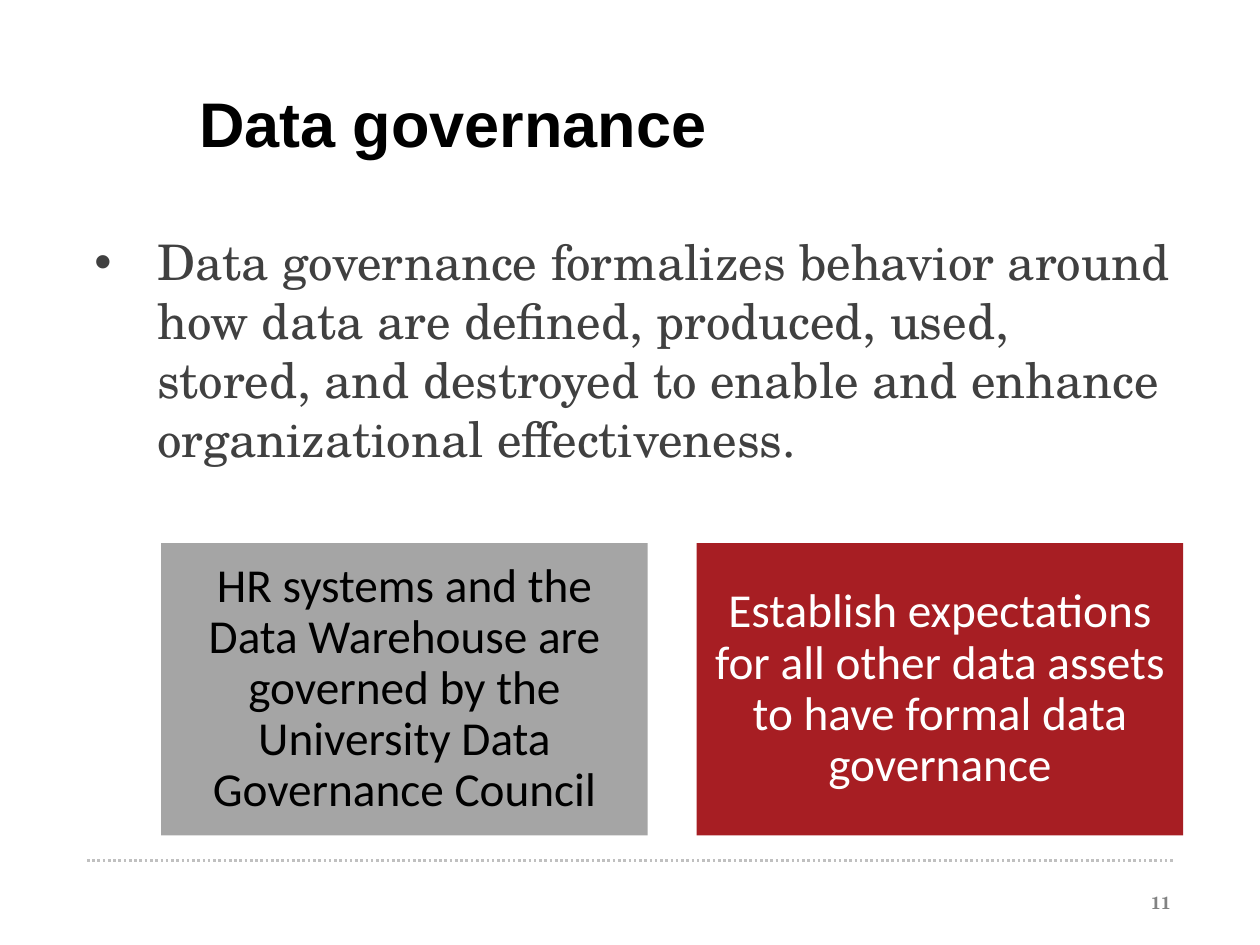
from lxml.etree import SubElement
from pptx import Presentation
from pptx.dml.color import RGBColor
from pptx.enum.dml import MSO_LINE
from pptx.enum.shapes import MSO_CONNECTOR, MSO_SHAPE
from pptx.enum.text import MSO_ANCHOR as Anchor, PP_ALIGN as Align
from pptx.oxml.ns import qn
from pptx.util import Pt

EMU_PER_PX = 9144  # 100 px to the inch
SERIF, SANS, HEADING = "TeX Gyre Schola", "Calibri", "Arial"


def px(length):
    return length * EMU_PER_PX


def color(hex_string):
    return RGBColor.from_string(hex_string)


def write(frame, text, *, font, size, ink, bold=False, align=Align.LEFT,
          anchor=Anchor.TOP, line_spacing=None, margins=(10, 5, 10, 5), bullet_indent=0):
    """Fill a text frame with one formatted paragraph."""
    frame.word_wrap = True
    frame.vertical_anchor = anchor
    (frame.margin_left, frame.margin_top,
     frame.margin_right, frame.margin_bottom) = map(px, margins)
    paragraph = frame.paragraphs[0]
    paragraph.alignment = align
    if line_spacing:
        paragraph.line_spacing = line_spacing
    if bullet_indent:
        properties = paragraph._p.get_or_add_pPr()
        properties.set("marL", str(px(bullet_indent)))
        properties.set("indent", str(-px(bullet_indent)))
        SubElement(properties, qn("a:buFont"), typeface=HEADING)
        SubElement(properties, qn("a:buChar"), char="•")
    run = paragraph.add_run()
    run.text = text
    run.font.name, run.font.size, run.font.bold = font, Pt(size), bold
    run.font.color.rgb = color(ink)


class SlideBuilder:
    def __init__(self, slide):
        self.slide = slide

    def text(self, left, top, width, height, text, **style):
        box = self.slide.shapes.add_textbox(*map(px, (left, top, width, height)))
        write(box.text_frame, text, **style)

    def panel(self, left, top, width, height, text, fill, ink):
        shape = self.slide.shapes.add_shape(
            MSO_SHAPE.RECTANGLE, *map(px, (left, top, width, height)))
        shape.shadow.inherit = False
        shape.fill.solid()
        shape.fill.fore_color.rgb = color(fill)
        shape.line.fill.background()
        write(shape.text_frame, text, font=SANS, size=27, ink=ink, align=Align.CENTER,
              anchor=Anchor.MIDDLE, line_spacing=0.9, margins=(11, 11, 11, 11))

    def dotted_rule(self, left, right, y, ink):
        rule = self.slide.shapes.add_connector(
            MSO_CONNECTOR.STRAIGHT, px(left), px(y), px(right), px(y))
        rule.line.color.rgb = color(ink)
        rule.line.width = Pt(1.5)
        rule.line.dash_style = MSO_LINE.ROUND_DOT
        SubElement(rule._element.spPr, qn("a:effectLst"))


def main():
    presentation = Presentation()
    presentation.slide_width, presentation.slide_height = px(1000), px(750)
    builder = SlideBuilder(presentation.slides.add_slide(presentation.slide_layouts[6]))

    # Footer rule
    builder.dotted_rule(69, 932, 683, "C0C0C0")

    # Title and definition
    builder.text(65, 74, 874, 90, "Data governance", font=HEADING, size=36,
                 ink="000000", bold=True, line_spacing=0.8, margins=(93, 5, 10, 5))
    builder.text(65, 179, 874, 452,
                 "Data governance formalizes behavior around how data are defined, "
                 "produced, used, stored, and destroyed to enable and enhance "
                 "organizational effectiveness.",
                 font=SERIF, size=28, ink="404040", bullet_indent=50)

    # Slide number
    builder.text(714, 703, 225, 40, "11", font=SERIF, size=10, ink="828383",
                 bold=True, align=Align.RIGHT)

    # Two panels side by side
    panels = [
        ("HR systems and the Data Warehouse are governed by the University Data "
         "Governance Council", "A5A5A5", "000000"),
        ("Establish expectations for all other data assets to have formal data "
         "governance", "A71E23", "FFFFFF"),
    ]
    width, gap = 386, 39
    for index, (text, fill, ink) in enumerate(panels):
        builder.panel(128 + index * (width + gap), 431, width, 232, text, fill, ink)

    presentation.save("out.pptx")


if __name__ == "__main__":
    main()
